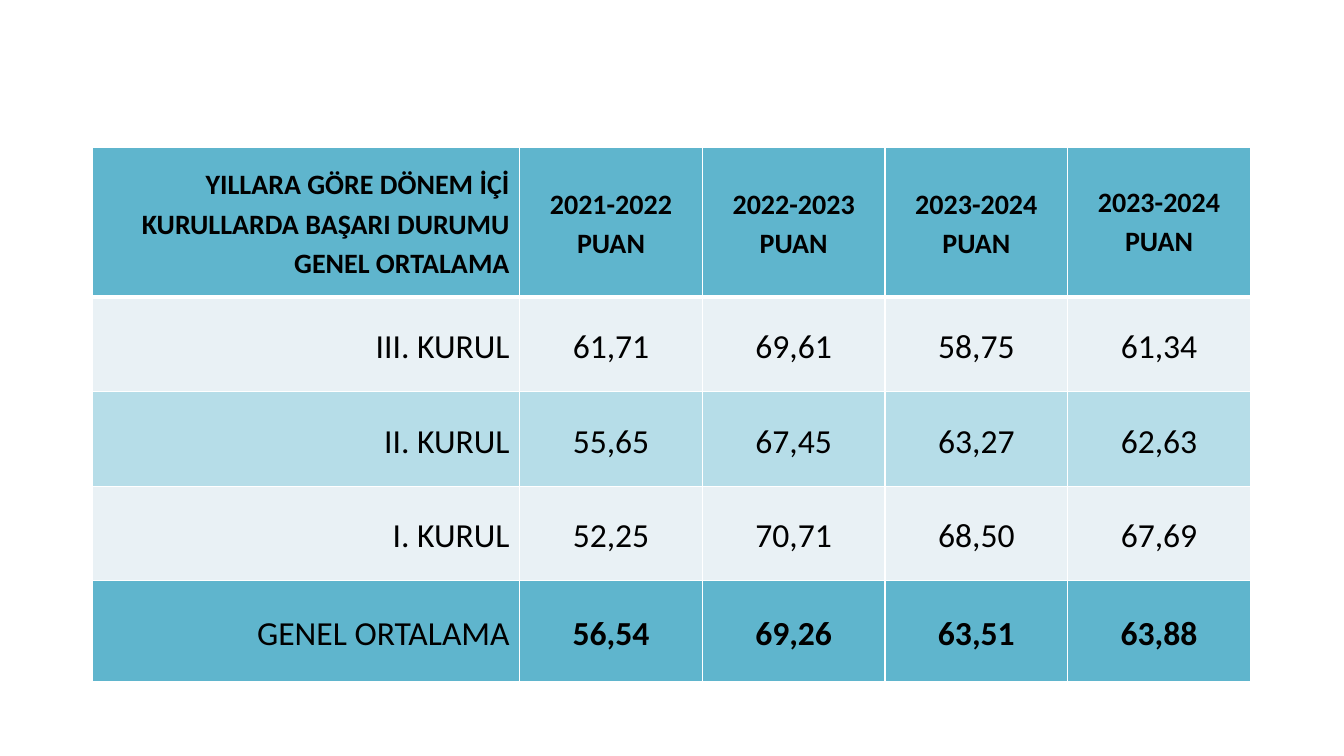
from lxml import etree
from pptx import Presentation, util as u
from pptx.dml.color import RGBColor
from pptx.enum import text
from pptx.oxml.ns import qn

PX = 9525  # 96 px to the inch
HUES = {"ink": "000000", "rule": "FFFFFF", "head": "5FB5CD",
        "pale": "E9F1F5", "band": "B6DDE8"}
WIDTHS = [407] + [174] * 4
HEIGHTS = [143, 90, 90, 90, 96]
FILLS = ["head", "pale", "band", "pale", "head"]
ROWS = [
    ["YILLARA GÖRE DÖNEM İÇİ KURULLARDA BAŞARI DURUMU GENEL ORTALAMA",
     "2021-2022 PUAN", "2022-2023 PUAN", "2023-2024 PUAN", "2023-2024 PUAN"],
    ["III. KURUL", "61,71", "69,61", "58,75", "61,34"],
    ["II. KURUL", "55,65", "67,45", "63,27", "62,63"],
    ["I. KURUL", "52,25", "70,71", "68,50", "67,69"],
    ["GENEL ORTALAMA", "56,54", "69,26", "63,51", "63,88"],
]
SIDES = ["left", "right", "top", "bottom"]


def px(n):
    return u.Emu(n * PX)


def put(item, form):
    """Set each attribute in form on item."""
    for key, value in form.items():
        setattr(item, key, value)


def edge(cell, widths):
    """Draw the cell borders; widths are points for left, right, top, bottom."""
    props = cell._tc.get_or_add_tcPr()
    for i, (side, wide) in enumerate(zip("LRTB", widths)):
        line = etree.Element(qn(f"a:ln{side}"), w=str(u.Pt(wide)))
        fill = etree.SubElement(line, qn("a:solidFill"))
        etree.SubElement(fill, qn("a:srgbClr"), val=HUES["rule"])
        props.insert(i, line)


def write(cell, words, size, bold, align):
    cell.text = words
    cell.vertical_anchor = text.MSO_ANCHOR.MIDDLE
    para = cell.text_frame.paragraphs[0]
    put(para, {"alignment": align, "line_spacing": 1.15})
    font = para.runs[0].font
    put(font, {"name": "Calibri", "size": u.Pt(size), "bold": bold})
    font.color.rgb = RGBColor.from_string(HUES["ink"])


def paint(cell, hue):
    cell.fill.solid()
    cell.fill.fore_color.rgb = RGBColor.from_string(HUES[hue])


def grid(slide):
    """Add the table of yearly scores."""
    frame = slide.shapes.add_table(len(ROWS), len(WIDTHS), px(88), px(140),
                                   px(sum(WIDTHS)), px(sum(HEIGHTS)))
    table = frame.table
    for col, wide in zip(table.columns, WIDTHS):
        col.width = px(wide)
    for row, high in zip(table.rows, HEIGHTS):
        row.height = px(high)
    last = len(ROWS) - 1
    for r, words in enumerate(ROWS):
        for c, word in enumerate(words):
            cell = table.cell(r, c)
            bold = r == 0 or (r == last and c > 0)
            align = text.PP_ALIGN.CENTER if c else text.PP_ALIGN.RIGHT
            write(cell, word, 24 if r else 20, bold, align)
            paint(cell, FILLS[r])
            edge(cell, [1, 1, 3 if r == 1 else 1, 1 if r else 3])
            if c > 1:
                put(cell, {f"margin_{side}": 0 for side in SIDES})
    # The last heading sits slightly higher than its neighbours.
    table.cell(0, 4).margin_bottom = px(4)


def main():
    deck = Presentation()
    put(deck, {"slide_width": px(1280), "slide_height": px(720)})
    grid(deck.slides.add_slide(deck.slide_layouts[6]))
    deck.save("out.pptx")


if __name__ == "__main__":
    main()
